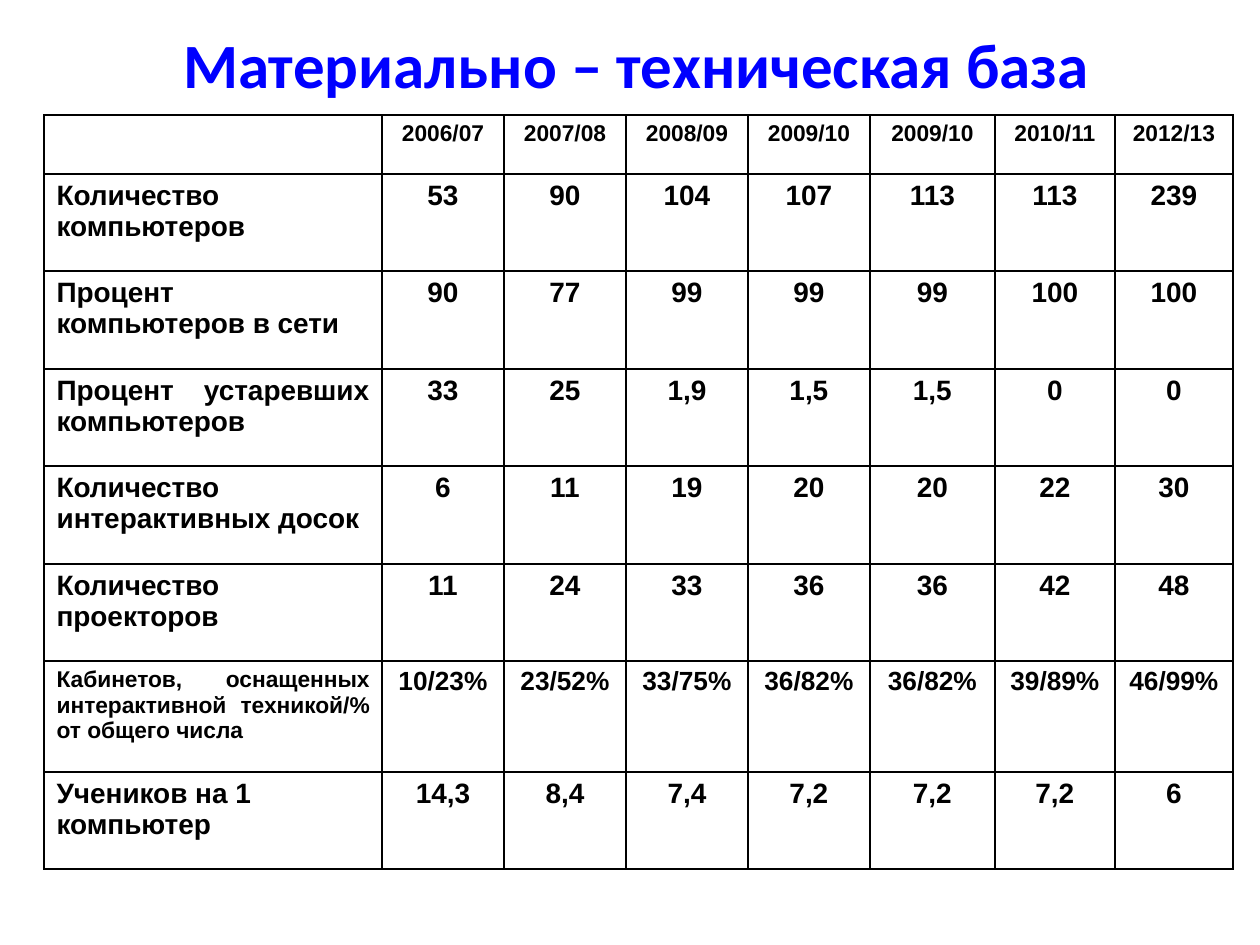
from lxml.etree import SubElement
from pptx import Presentation
from pptx.dml.color import RGBColor as RGB
from pptx.enum.text import MSO_ANCHOR as Anchor, PP_ALIGN as Align
from pptx.oxml.ns import qn
from pptx.util import Pt

PX = 914400 // 126
INK = {"title": "0000FF", "text": "000000", "line": "000000"}

# label, label size, label alignment, value size, row height, values
ROWS = [
    ("", 13, Align.LEFT, 13, 59,
     "2006/07 2007/08 2008/09 2009/10 2009/10 2010/11 2012/13"),
    ("Количество компьютеров", 16, Align.JUSTIFY, 16, 97,
     "53 90 104 107 113 113 239"),
    ("Процент компьютеров в сети", 16, Align.JUSTIFY, 16, 98,
     "90 77 99 99 99 100 100"),
    ("Процент устаревших компьютеров", 16, Align.JUSTIFY, 16, 97,
     "33 25 1,9 1,5 1,5 0 0"),
    ("Количество интерактивных досок", 16, Align.JUSTIFY, 16, 98,
     "6 11 19 20 20 22 30"),
    ("Количество проекторов", 16, Align.JUSTIFY, 16, 97,
     "11 24 33 36 36 42 48"),
    ("Кабинетов, оснащенных интерактивной техникой/% от общего числа",
     13, Align.JUSTIFY, 15, 111,
     "10/23% 23/52% 33/75% 36/82% 36/82% 39/89% 46/99%"),
    ("Учеников на 1 компьютер", 16, Align.LEFT, 16, 97,
     "14,3 8,4 7,4 7,2 7,2 7,2 6"),
]
COLS = [338] + [122] * 4 + [125, 120, 118]


def write(frame, text, size, face, ink, align):
    para = frame.paragraphs[0]
    para.text = text
    para.alignment = align
    font = para.font
    font.name, font.size, font.bold = face, Pt(size), True
    font.color.rgb = RGB.from_string(INK[ink])


def frame_cell(cell):
    """Draw a 1 pt line on all four sides and leave the cell unfilled."""
    props = cell._tc.get_or_add_tcPr()
    for side in ("a:lnL", "a:lnR", "a:lnT", "a:lnB"):
        line = SubElement(props, qn(side), w=str(Pt(1)))
        fill = SubElement(line, qn("a:solidFill"))
        SubElement(fill, qn("a:srgbClr"), val=INK["line"])
    cell.fill.background()


prs = Presentation()
prs.slide_width, prs.slide_height = 1260 * PX, 945 * PX
slide = prs.slides.add_slide(prs.slide_layouts[6])

title = slide.shapes.add_textbox(44 * PX, 0, 1134 * PX, 126 * PX).text_frame
title.word_wrap = True
title.vertical_anchor = Anchor.MIDDLE
title.margin_left = 63 * PX
write(title, "Материально – техническая база", 36, "Calibri", "title",
      Align.CENTER)

high = sum(row[4] for row in ROWS)
table = slide.shapes.add_table(len(ROWS), len(COLS), 44 * PX, 115 * PX,
                               sum(COLS) * PX, high * PX).table
table.first_row = table.horz_banding = False
for col, width in zip(table.columns, COLS):
    col.width = width * PX

for r, (label, small, align, size, height, values) in enumerate(ROWS):
    table.rows[r].height = height * PX
    for c, text in enumerate([label] + values.split()):
        cell = table.cell(r, c)
        frame_cell(cell)
        if c == 0:
            write(cell.text_frame, text, small, "Arial", "text", align)
        else:
            write(cell.text_frame, text, size, "Arial", "text", Align.CENTER)

prs.save("out.pptx")
